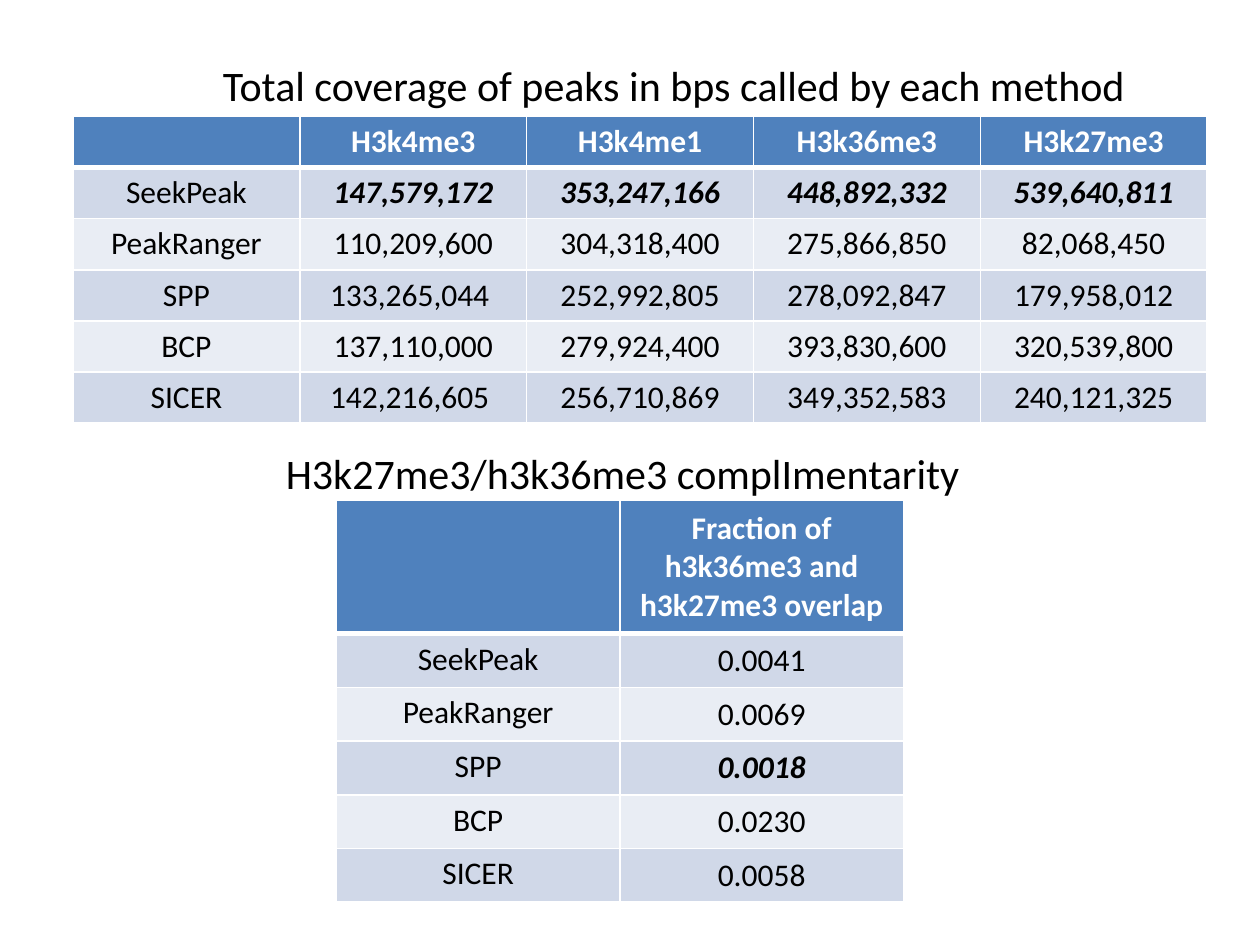
from dataclasses import dataclass

import lxml.etree
import pptx
import pptx.dml.color
import pptx.enum.text
import pptx.oxml.ns
import pptx.util

Inches = pptx.util.Inches
Pt = pptx.util.Pt
FONT = "Calibri"
COLORS = {
    "header": "4F81BD",
    "odd_row": "D0D8E8",
    "even_row": "E9EDF4",
    "light": "FFFFFF",
    "dark": "000000",
}


@dataclass
class Heading:
    text: str
    left: float
    top: float
    width: float
    height: float = 0.5


@dataclass
class ResultTable:
    rows: list[list[str]]
    left: float
    top: float
    width: float
    height: float
    header_height: float
    best: set[tuple[int, int]]
    values_anchor: pptx.enum.text.MSO_ANCHOR


HEADINGS = [
    Heading("Total coverage of peaks in bps called by each method", 1.67, 0.42, 7.43),
    Heading("H3k27me3/h3k36me3 complImentarity", 2.17, 3.5, 5.59),
]

COVERAGE = ResultTable(
    rows=[
        ["", "H3k4me3", "H3k4me1", "H3k36me3", "H3k27me3"],
        ["SeekPeak", "147,579,172", "353,247,166", "448,892,332", "539,640,811"],
        ["PeakRanger", "110,209,600", "304,318,400", "275,866,850", "82,068,450"],
        ["SPP", "133,265,044 ", "252,992,805", "278,092,847", "179,958,012"],
        ["BCP", "137,110,000", "279,924,400", "393,830,600", "320,539,800"],
        ["SICER", "142,216,605 ", "256,710,869", "349,352,583", "240,121,325"],
    ],
    left=0.58, top=0.92, width=9, height=2.43, header_height=0.41,
    best={(1, column) for column in range(1, 5)},
    values_anchor=pptx.enum.text.MSO_ANCHOR.TOP,
)

OVERLAP = ResultTable(
    rows=[
        ["", "Fraction of h3k36me3 and h3k27me3 overlap"],
        ["SeekPeak", "0.0041"],
        ["PeakRanger", "0.0069"],
        ["SPP", "0.0018"],
        ["BCP", "0.0230"],
        ["SICER", "0.0058"],
    ],
    left=2.67, top=3.97, width=4.5, height=3.19, header_height=1.06,
    best={(3, 1)},
    values_anchor=pptx.enum.text.MSO_ANCHOR.MIDDLE,
)


def rgb(name: str) -> pptx.dml.color.RGBColor:
    return pptx.dml.color.RGBColor.from_string(COLORS[name])


def style_font(font, size: float, color: str) -> None:
    font.name = FONT
    font.size = Pt(size)
    font.color.rgb = rgb(color)


def set_borders(cell, row: int) -> None:
    qn = pptx.oxml.ns.qn
    widths = {
        "lnL": 1,
        "lnR": 1,
        "lnT": 3 if row == 1 else 1,
        "lnB": 3 if row == 0 else 1,
    }
    properties = cell._tc.get_or_add_tcPr()
    for position, (side, width) in enumerate(widths.items()):
        border = lxml.etree.Element(qn(f"a:{side}"), w=str(Pt(width)))
        fill = lxml.etree.SubElement(border, qn("a:solidFill"))
        lxml.etree.SubElement(fill, qn("a:srgbClr"), val=COLORS["light"])
        properties.insert(position, border)


def draw_heading(slide, heading: Heading) -> None:
    box = slide.shapes.add_textbox(
        Inches(heading.left), Inches(heading.top),
        Inches(heading.width), Inches(heading.height),
    )
    frame = box.text_frame
    frame.word_wrap = False
    frame.auto_size = pptx.enum.text.MSO_AUTO_SIZE.SHAPE_TO_FIT_TEXT
    frame.text = heading.text
    style_font(frame.paragraphs[0].runs[0].font, 24, "dark")


def draw_table(slide, result: ResultTable) -> None:
    grid = slide.shapes.add_table(
        len(result.rows), len(result.rows[0]),
        Inches(result.left), Inches(result.top),
        Inches(result.width), Inches(result.height),
    ).table
    body_height = (result.height - result.header_height) / (len(result.rows) - 1)
    middle = pptx.enum.text.MSO_ANCHOR.MIDDLE
    for row, values in enumerate(result.rows):
        is_header = row == 0
        grid.rows[row].height = Inches(result.header_height if is_header else body_height)
        fill = "header" if is_header else "odd_row" if row % 2 else "even_row"
        for column, value in enumerate(values):
            cell = grid.cell(row, column)
            cell.fill.solid()
            cell.fill.fore_color.rgb = rgb(fill)
            set_borders(cell, row)
            if is_header:
                cell.vertical_anchor = middle
            elif column > 0:
                cell.vertical_anchor = result.values_anchor
            cell.text_frame.text = value
            paragraph = cell.text_frame.paragraphs[0]
            paragraph.alignment = pptx.enum.text.PP_ALIGN.CENTER
            for run in paragraph.runs:
                style_font(run.font, 18, "light" if is_header else "dark")
                run.font.bold = is_header or (row, column) in result.best
                run.font.italic = (row, column) in result.best


def main() -> None:
    presentation = pptx.Presentation()
    presentation.slide_width = Inches(10)
    presentation.slide_height = Inches(7.5)
    slide = presentation.slides.add_slide(presentation.slide_layouts[6])
    for heading, result in zip(HEADINGS, [COVERAGE, OVERLAP]):
        draw_table(slide, result)
        draw_heading(slide, heading)
    presentation.save("out.pptx")


if __name__ == "__main__":
    main()
